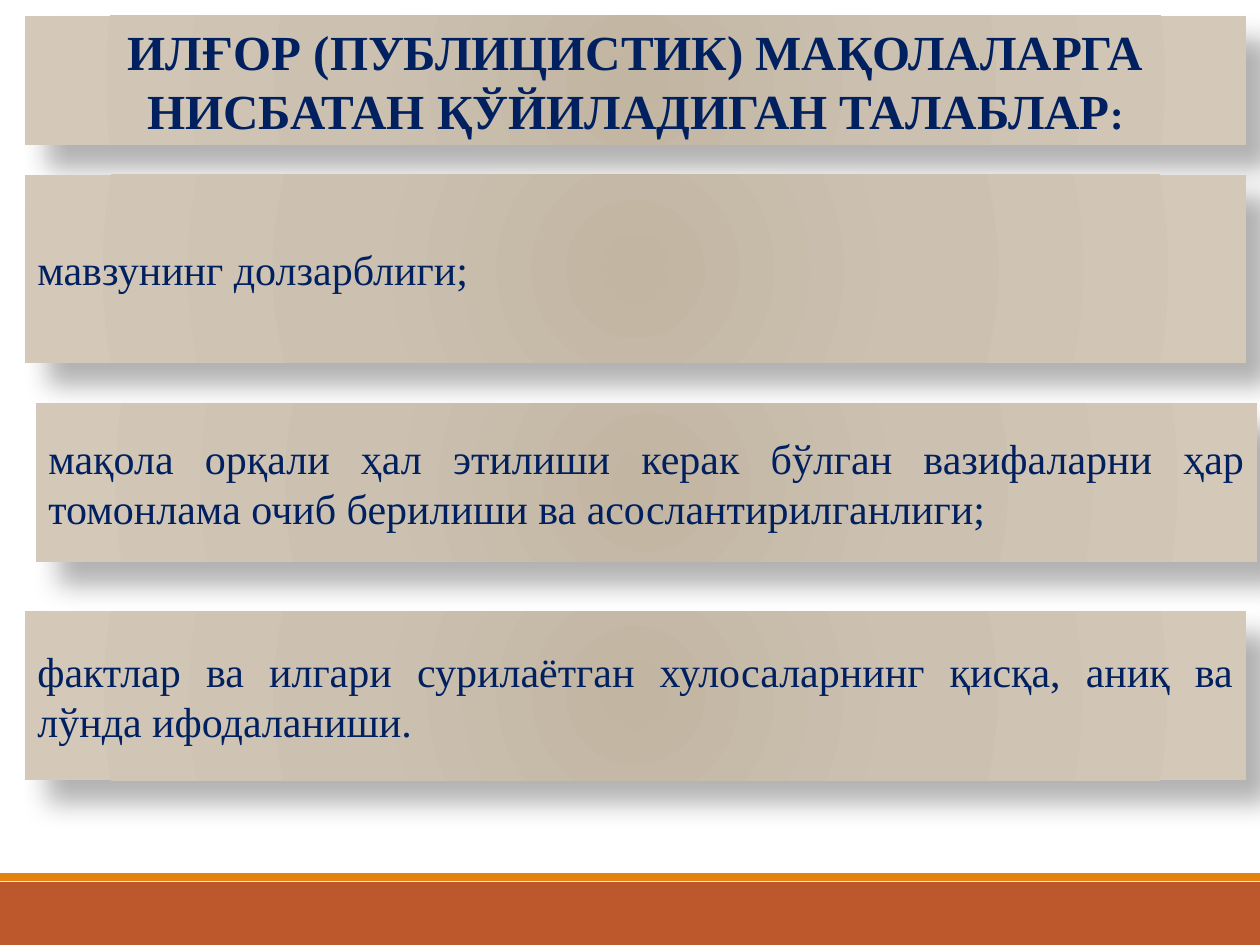
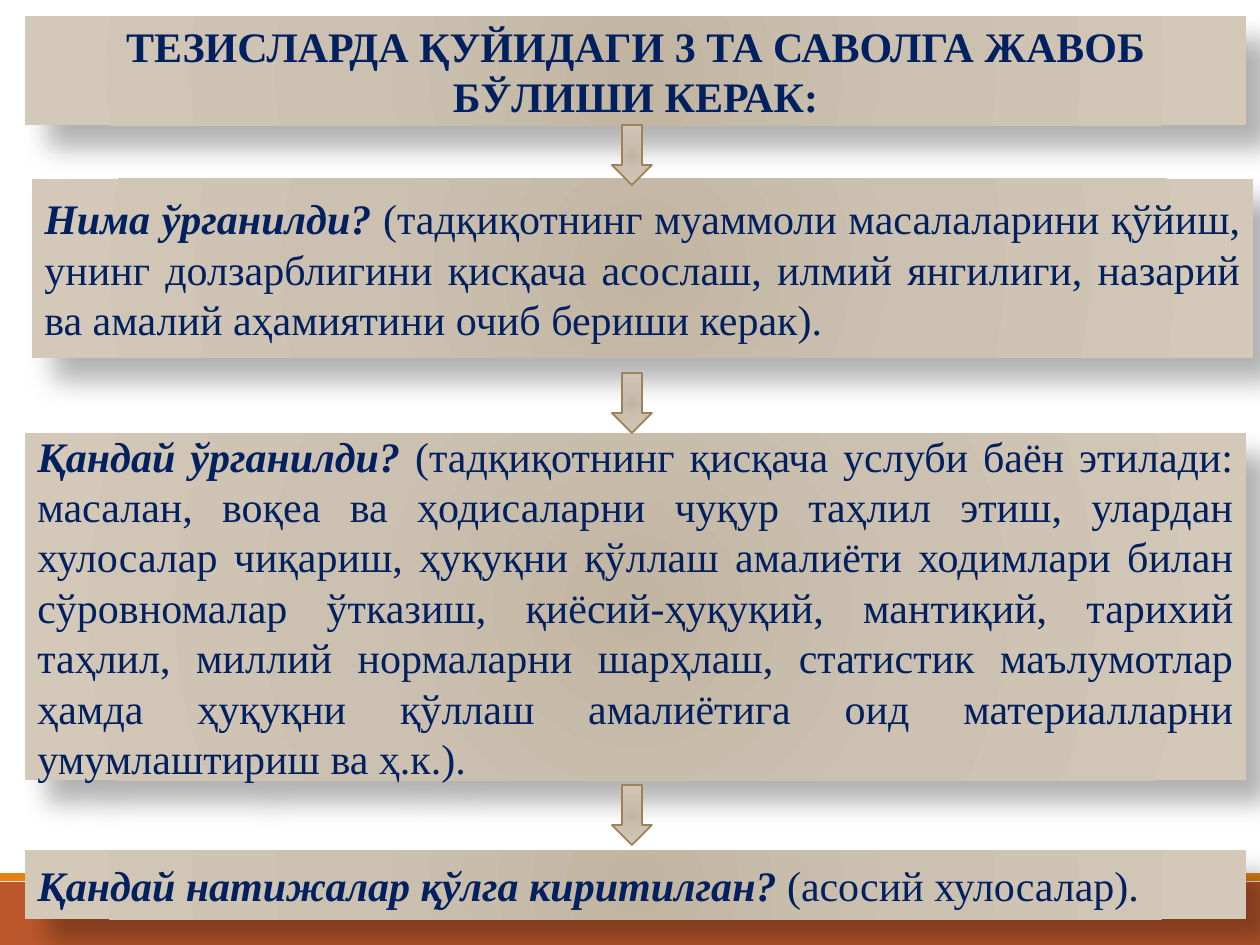
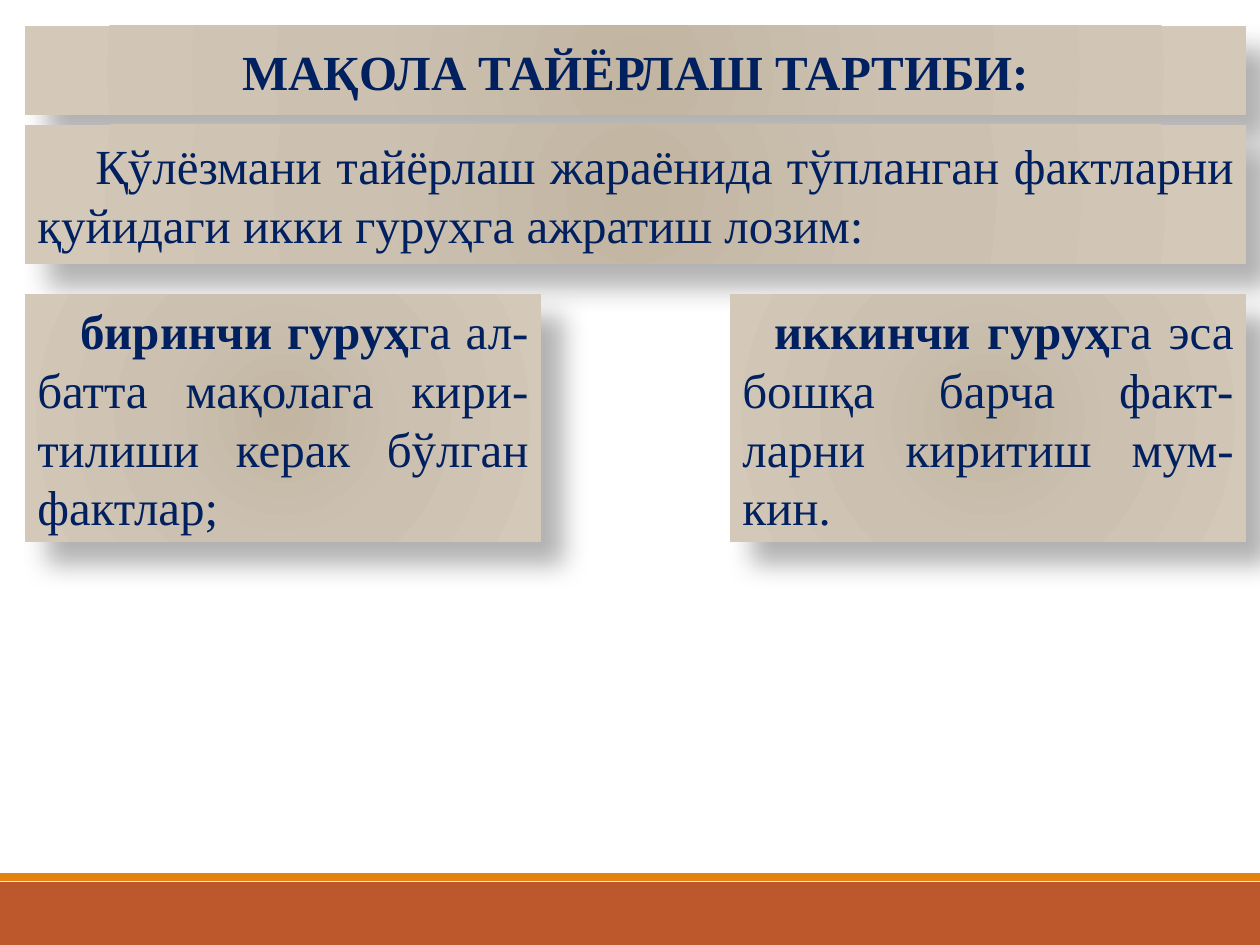
from lxml import etree
from pptx import Presentation
from pptx.dml.color import RGBColor
from pptx.enum.shapes import MSO_SHAPE
from pptx.enum.text import MSO_ANCHOR, PP_ALIGN
from pptx.util import Emu, Pt

RECT = MSO_SHAPE.RECTANGLE
ROUND = MSO_SHAPE.ROUNDED_RECTANGLE
DOWN = MSO_SHAPE.DOWN_ARROW
MIDDLE = MSO_ANCHOR.MIDDLE
CENTER = PP_ALIGN.CENTER
JUSTIFY = PP_ALIGN.JUSTIFY

SCALE = 914400 / 126
WIDE, HIGH = 1260, 945
LEFT, FULL, HALF = 25, 1221, 516
FONT = "Times New Roman"
NAVY, BROWN = "002060", "9B8357"
RUST, AMBER = "BD582C", "E48312"
STOPS = ((0, "C2B5A2"), (45, "CCC1B1"), (100, "D4C8B8"))
NS = "http://schemas.openxmlformats.org/drawingml/2006/main"


def px(num):
    """Turn pixels into EMU."""
    return Emu(round(num * SCALE))


def color(code):
    """Turn a hex string into a colour."""
    return RGBColor.from_string(code)


def node(tag, parent=None, **attrs):
    """Make a DrawingML element, inside parent if given."""
    name = f"{{{NS}}}{tag}"
    attrs = {key: str(val) for key, val in attrs.items()}
    if parent is None:
        return etree.Element(name, attrs, nsmap={"a": NS})
    return etree.SubElement(parent, name, attrs)


def shape(slide, kind, x, y, w, h):
    """Add a preset shape without shadow or line."""
    item = slide.shapes.add_shape(kind, px(x), px(y), px(w), px(h))
    item.shadow.inherit = False
    item.line.fill.background()
    return item


def shade(item):
    """Fill a shape with the round beige gradient."""
    grad = node("gradFill", rotWithShape=1)
    stops = node("gsLst", grad)
    for spot, code in STOPS:
        node("srgbClr", node("gs", stops, pos=spot * 1000), val=code)
    way = node("path", grad, path="circle")
    node("fillToRect", way, l=100000, t=100000, r=100000, b=100000)
    item._element.spPr.find(f"{{{NS}}}prstGeom").addnext(grad)


def drop(item):
    """Give a shape a soft shadow to the lower right."""
    effects = item._element.spPr.find(f"{{{NS}}}effectLst")
    outer = node("outerShdw", effects, blurRad=Pt(15), dist=Pt(18),
                 dir=45 * 60000, algn="tl", rotWithShape=0)
    node("alpha", node("srgbClr", outer, val="000000"), val=30000)


def write(para, text, size=24, bold=False, italic=False):
    """Add a run of text to a paragraph."""
    run = para.add_run()
    run.text = text
    font = run.font
    font.name, font.size = FONT, Pt(size)
    font.bold, font.italic = bold, italic
    font.color.rgb = color(NAVY)


def panel(slide, y, h, *runs, x=LEFT, w=FULL, align=JUSTIFY, indent=0):
    """Add a beige panel holding one paragraph of (text, format) runs."""
    item = shape(slide, ROUND, x, y, w, h)
    item.adjustments[0] = 0
    shade(item)
    drop(item)
    frame = item.text_frame
    frame.word_wrap = True
    frame.vertical_anchor = MIDDLE
    para = frame.paragraphs[0]
    para.alignment = align
    if indent:
        para._p.get_or_add_pPr().set("indent", str(px(indent)))
    for text, style in runs:
        write(para, text, **style)


def arrow(slide, y):
    """Add a down arrow between two panels."""
    item = shape(slide, DOWN, 612, y, 40, 60)
    item.line.color.rgb = color(BROWN)
    item.line.width = Pt(1)
    shade(item)


def page(deck):
    """Add a blank slide with the two footer bands."""
    slide = deck.slides.add_slide(deck.slide_layouts[6])
    for y, h, code in ((882, 63, RUST), (873, 8, AMBER)):
        band = shape(slide, RECT, 0, y, WIDE, h)
        band.fill.solid()
        band.fill.fore_color.rgb = color(code)
    return slide


def demands(deck):
    """Build the slide on what an article must meet."""
    slide = page(deck)
    panel(slide, 16, 129,
          ("ИЛҒОР (ПУБЛИЦИСТИК) МАҚОЛАЛАРГА НИСБАТАН ҚЎЙИЛАДИГАН ТАЛАБЛАР",
           {"size": 28, "bold": True}),
          (":", {"bold": True}), align=CENTER)
    for x, y, h, text in (
        (LEFT, 175, 188, "мавзунинг долзарблиги;"),
        (36, 403, 159, "мақола орқали ҳал этилиши керак бўлган вазифаларни "
         "ҳар томонлама очиб берилиши ва асослантирилганлиги;"),
        (LEFT, 611, 169, "фактлар ва илгари сурилаётган хулосаларнинг қисқа, "
         "аниқ ва лўнда ифодаланиши."),
    ):
        panel(slide, y, h, (text, {}), x=x)


def theses(deck):
    """Build the slide on the three questions."""
    slide = page(deck)
    panel(slide, 16, 109,
          ("ТЕЗИСЛАРДА ҚУЙИДАГИ 3 ТА САВОЛГА ЖАВОБ БЎЛИШИ КЕРАК:",
           {"bold": True}), align=CENTER)
    for x, y, h, tip, ask, reply in (
        (32, 179, 179, 125, "Нима ўрганилди? ",
         "(тадқиқотнинг муаммоли масалаларини қўйиш, унинг долзарблигини "
         "қисқача асослаш, илмий янгилиги, назарий ва амалий аҳамиятини "
         "очиб бериши керак)."),
        (LEFT, 433, 347, 373, "Қандай ўрганилди? ",
         "(тадқиқотнинг қисқача услуби баён этилади: масалан, воқеа ва "
         "ҳодисаларни чуқур таҳлил этиш, улардан хулосалар чиқариш, ҳуқуқни "
         "қўллаш амалиёти ходимлари билан сўровномалар ўтказиш, "
         "қиёсий-ҳуқуқий, мантиқий, тарихий таҳлил, миллий нормаларни "
         "шарҳлаш, статистик маълумотлар ҳамда ҳуқуқни қўллаш амалиётига "
         "оид материалларни умумлаштириш ва ҳ.к.)."),
        (LEFT, 850, 69, 785, "Қандай натижалар қўлга киритилган? ",
         "(асосий хулосалар)."),
    ):
        panel(slide, y, h, (ask, {"bold": True, "italic": True}),
              (reply, {}), x=x)
        arrow(slide, tip)


def order(deck):
    """Build the slide on how to prepare an article."""
    slide = page(deck)
    large = {"size": 28}
    strong = {"size": 28, "bold": True}
    panel(slide, 26, 89, ("МАҚОЛА ТАЙЁРЛАШ ТАРТИБИ:", strong), align=CENTER)
    panel(slide, 125, 139,
          ("Қўлёзмани тайёрлаш жараёнида тўпланган фактларни қуйидаги икки "
           "гуруҳга ажратиш лозим:", large), indent=58)
    for x, indent, group, rest in (
        (LEFT, 43, "биринчи гуруҳ",
         "га ал-батта мақолага кири-тилиши керак бўлган фактлар;"),
        (LEFT + FULL - HALF, 32, "иккинчи гуруҳ",
         "га эса бошқа барча факт-ларни киритиш мум-кин."),
    ):
        panel(slide, 294, 248, (group, strong), (rest, large),
              x=x, w=HALF, indent=indent)


def main():
    """Build the deck and save it."""
    deck = Presentation()
    deck.slide_width, deck.slide_height = px(WIDE), px(HIGH)
    for build in (demands, theses, order):
        build(deck)
    deck.save("out.pptx")


if __name__ == "__main__":
    main()
